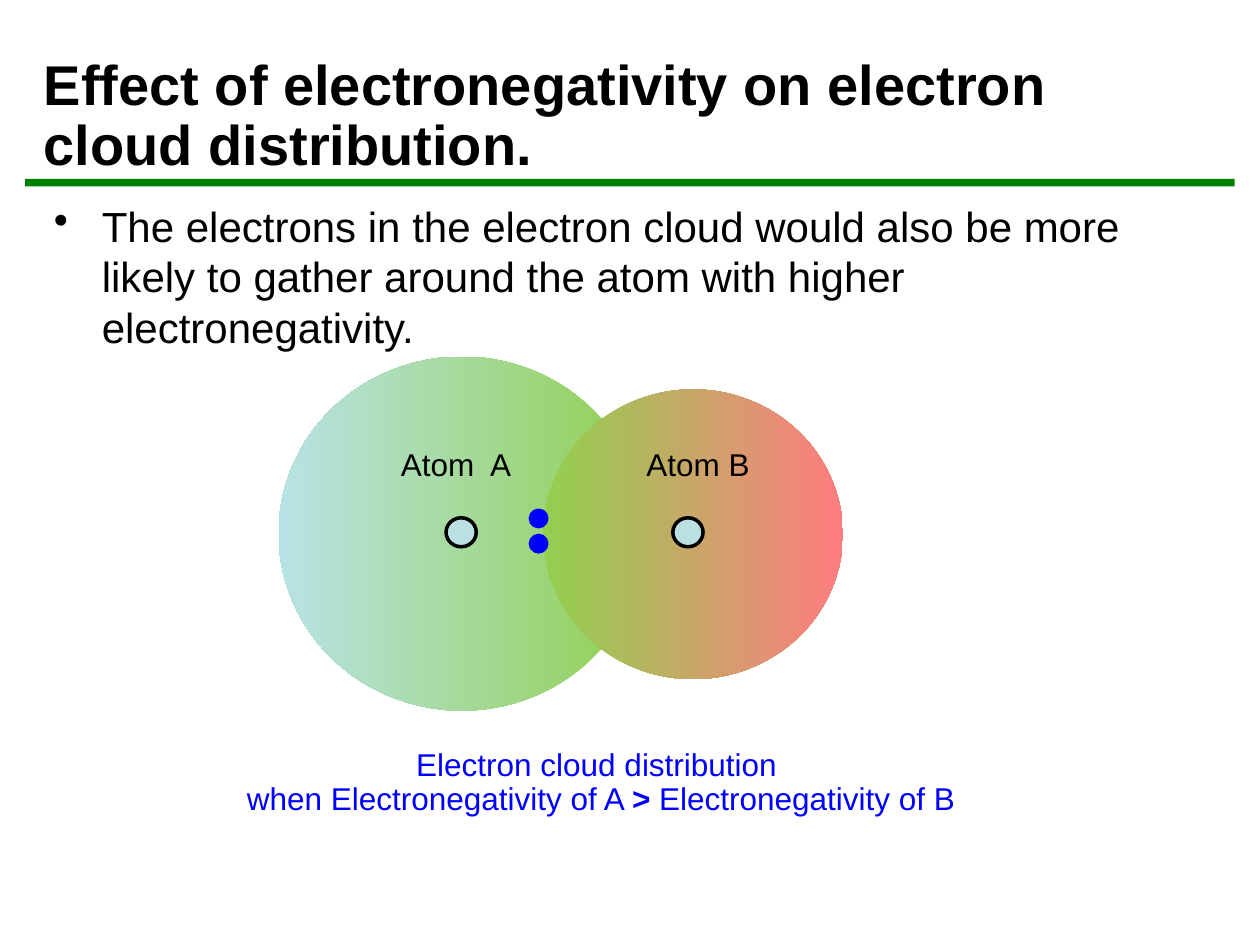
from pptx import Presentation
from pptx.dml.color import RGBColor
from pptx.enum.shapes import MSO_SHAPE
from pptx.enum.text import MSO_ANCHOR, MSO_AUTO_SIZE, PP_ALIGN
from pptx.oxml.ns import qn
from pptx.util import Inches, Pt
from lxml.etree import SubElement

COLORS = {
    "black": "000000", "rule": "008000", "blue": "0000FF",
    "core": "BBE0E3", "green": "92D050", "ice": "B8E3E6", "rose": "FF7C80",
}


def color(name):
    return RGBColor.from_string(COLORS[name])


def add_shape(shapes, kind, box, fill=None, line=None):
    shape = shapes.add_shape(kind, *map(Inches, box))
    shape.shadow.inherit = False
    if fill:
        shape.fill.solid()
        shape.fill.fore_color.rgb = color(fill)
    if line:
        shape.line.color.rgb = color(line)
        shape.line.width = Pt(2)
    else:
        shape.line.fill.background()
    return shape


def add_text(shapes, box, text, size, wrap=True):
    frame = shapes.add_textbox(*map(Inches, box)).text_frame
    frame.word_wrap = wrap
    para = frame.paragraphs[0]
    para.text = text
    style(para, size)
    return frame, para


def style(para, size, tint="black"):
    for run in para.runs:
        run.font.name = "Arial"
        run.font.size = Pt(size)
        run.font.color.rgb = color(tint)


def add_title(slide, left, top, width, height):
    # Green rule under the heading
    add_shape(slide.shapes, MSO_SHAPE.RECTANGLE,
              (left - 0.05, top + 1.13, 9.6, 0.06), "rule")
    frame, para = add_text(
        slide.shapes, (left, top, width, height),
        "Effect of electronegativity on electron cloud distribution.", 32)
    frame.vertical_anchor = MSO_ANCHOR.BOTTOM
    para.line_spacing = 0.9
    para.runs[0].font.bold = True


def add_body(slide, left, top, width, height):
    _, para = add_text(
        slide.shapes, (left, top, width, height),
        "The electrons in the electron cloud would also be more likely to "
        "gather around the atom with higher electronegativity.", 24)
    props = para._p.get_or_add_pPr()
    props.set("marL", str(Inches(0.38)))
    props.set("indent", str(-Inches(0.38)))
    SubElement(props, qn("a:buChar")).set("char", "•")


def add_cloud(shapes, box, turn, tint):
    cloud = add_shape(shapes, MSO_SHAPE.OVAL, box)
    cloud.rotation = turn
    cloud.fill.gradient()
    cloud.fill.gradient_angle = 270
    for stop, name, place in zip(cloud.fill.gradient_stops,
                                 ("green", tint), (0, 1)):
        stop.color.rgb = color(name)
        stop.position = place


def add_label(shapes, box, text, wrap=False):
    frame, para = add_text(shapes, box, text, 18, wrap)
    frame.auto_size = MSO_AUTO_SIZE.SHAPE_TO_FIT_TEXT
    para.alignment = PP_ALIGN.CENTER
    para.line_spacing = 0.9
    return para


def add_diagram(slide, left, top, width):
    shapes = slide.shapes.add_group_shape().shapes

    # Caption
    para = add_label(
        shapes, (left, top + 3.12, width, 0.66),
        "Electron cloud distribution \vwhen Electronegativity of A ", True)
    for text, bold in (("> ", True), ("Electronegativity of B", False)):
        run = para.add_run()
        run.text = text
        run.font.bold = bold
    style(para, 18, "blue")

    # Clouds, each with its nucleus
    clouds = (
        ((0.47, 0, 2.81, 2.91), 90, "ice", 1.75),
        ((2.56, 0.27, 2.3, 2.38), 270, "rose", 3.55),
    )
    for (x, y, w, h), turn, tint, core in clouds:
        add_cloud(shapes, (left + x, top + y, w, h), turn, tint)
        add_shape(shapes, MSO_SHAPE.OVAL,
                  (left + core, top + 1.33, 0.24, 0.23), "core", "black")

    # Shared electron pair
    for y in (1.27, 1.47):
        add_shape(shapes, MSO_SHAPE.OVAL,
                  (left + 2.42, top + y, 0.13, 0.13), "blue", "blue")

    # Atom names
    for x, w, text in ((1.28, 1.1, "Atom  A"), (3.23, 1.04, "Atom B")):
        add_label(shapes, (left + x, top + 0.74, w, 0.38), text)


def main():
    deck = Presentation()
    deck.slide_width, deck.slide_height = Inches(10), Inches(7.5)
    slide = deck.slides.add_slide(deck.slide_layouts[6])
    add_title(slide, 0.25, 0.29, 9.37, 1.17)
    add_diagram(slide, 1.79, 2.78, 5.96)
    add_body(slide, 0.33, 1.54, 9.42, 0.92)
    deck.save("out.pptx")


if __name__ == "__main__":
    main()
